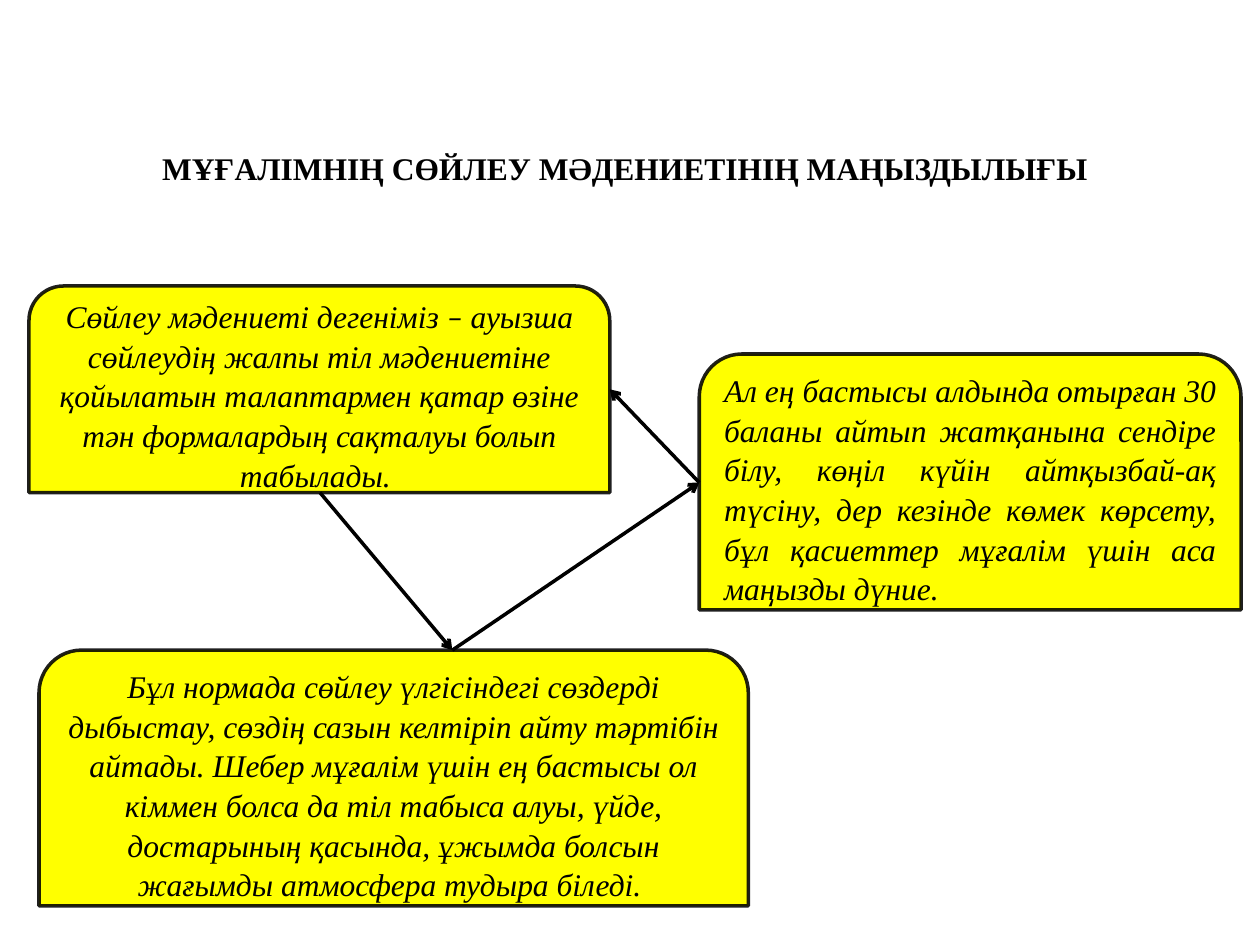
import pptx
import pptx.dml.color
import pptx.enum.shapes
import pptx.enum.text
import pptx.oxml
import pptx.oxml.ns
import pptx.util
from pptx.util import Inches

BLACK = pptx.dml.color.RGBColor(0, 0, 0)
YELLOW = pptx.dml.color.RGBColor(255, 255, 0)
SERIF = "Times New Roman"
CENTER = pptx.enum.text.PP_ALIGN.CENTER
JUSTIFY = pptx.enum.text.PP_ALIGN.JUSTIFY

TITLE = "МҰҒАЛІМНІҢ СӨЙЛЕУ МӘДЕНИЕТІНІҢ МАҢЫЗДЫЛЫҒЫ"
DEFINITION = [
    ("Сөйлеу мәдениеті дегеніміз ", SERIF),
    ("–", "Calibri"),
    (" ауызша сөйлеудің жалпы тіл мәдениетіне қойылатын талаптармен қатар "
     "өзіне тән формалардың сақталуы болып табылады. ", SERIF),
]
NORM = [
    ("Бұл нормада сөйлеу үлгісіндегі сөздерді дыбыстау, сөздің сазын келтіріп "
     "айту тәртібін айтады. Шебер мұғалім үшін ең бастысы ол кіммен болса да "
     "тіл табыса алуы, үйде, достарының қасында, ұжымда болсын жағымды "
     "атмосфера тудыра біледі. ", SERIF),
]
EMPATHY = [
    ("Ал ең бастысы алдында отырған 30 баланы айтып жатқанына сендіре білу, "
     "көңіл күйін айтқызбай-ақ түсіну, дер кезінде көмек көрсету, бұл "
     "қасиеттер мұғалім үшін аса маңызды дүние. ", SERIF),
]


def write_runs(frame, runs, align, bold=False, italic=False):
    frame.word_wrap = True
    paragraph = frame.paragraphs[0]
    paragraph.alignment = align
    paragraph.line_spacing = 1.05
    for text, font_name in runs:
        run = paragraph.add_run()
        run.text = text
        run.font.name = font_name
        run.font.size = pptx.util.Pt(18)
        run.font.bold = bold
        run.font.italic = italic
        run.font.color.rgb = BLACK


def add_title(slide):
    title = slide.shapes.add_textbox(
        Inches(0.39), Inches(1.12), Inches(9.14), Inches(0.57))
    write_runs(title.text_frame, [(TITLE, SERIF)], CENTER, bold=True)


def add_card(slide, bounds, runs, align=CENTER):
    card = slide.shapes.add_shape(
        pptx.enum.shapes.MSO_SHAPE.ROUND_2_SAME_RECTANGLE,
        *[Inches(length) for length in bounds])
    card.shadow.inherit = False
    card.fill.solid()
    card.fill.fore_color.rgb = YELLOW
    card.line.color.rgb = BLACK
    card.line.width = pptx.util.Pt(2)
    # 88 % opaque outline
    color = card.line._get_or_add_ln().find(".//" + pptx.oxml.ns.qn("a:srgbClr"))
    color.append(pptx.oxml.parse_xml(
        f'<a:alpha {pptx.oxml.ns.nsdecls("a")} val="88000"/>'))
    card.text_frame.vertical_anchor = pptx.enum.text.MSO_ANCHOR.MIDDLE
    write_runs(card.text_frame, runs, align, italic=True)


def add_arrow(slide, start, end):
    arrow = slide.shapes.add_connector(
        pptx.enum.shapes.MSO_CONNECTOR.STRAIGHT,
        *[Inches(length) for length in start + end])
    arrow.line.color.rgb = BLACK
    arrow.line.width = pptx.util.Pt(2)
    namespace = pptx.oxml.ns.nsdecls("a")
    arrow.line._get_or_add_ln().append(
        pptx.oxml.parse_xml(f'<a:tailEnd {namespace} type="arrow"/>'))
    arrow._element.spPr.append(
        pptx.oxml.parse_xml(f"<a:effectLst {namespace}/>"))


def main():
    presentation = pptx.Presentation()
    presentation.slide_width = Inches(10)
    presentation.slide_height = Inches(7.5)
    slide = presentation.slides.add_slide(presentation.slide_layouts[6])

    add_title(slide)
    add_card(slide, (0.23, 2.27, 4.61, 1.64), DEFINITION)
    add_card(slide, (0.31, 5.16, 5.63, 2.03), NORM)
    add_card(slide, (5.55, 2.81, 4.3, 2.03), EMPATHY, JUSTIFY)

    definition_bottom = (2.54, 3.91)
    definition_right = (4.84, 3.09)
    norm_top = (3.59, 5.16)
    empathy_left = (5.55, 3.83)
    add_arrow(slide, definition_bottom, norm_top)
    add_arrow(slide, norm_top, empathy_left)
    add_arrow(slide, empathy_left, definition_right)

    presentation.save("out.pptx")


if __name__ == "__main__":
    main()
